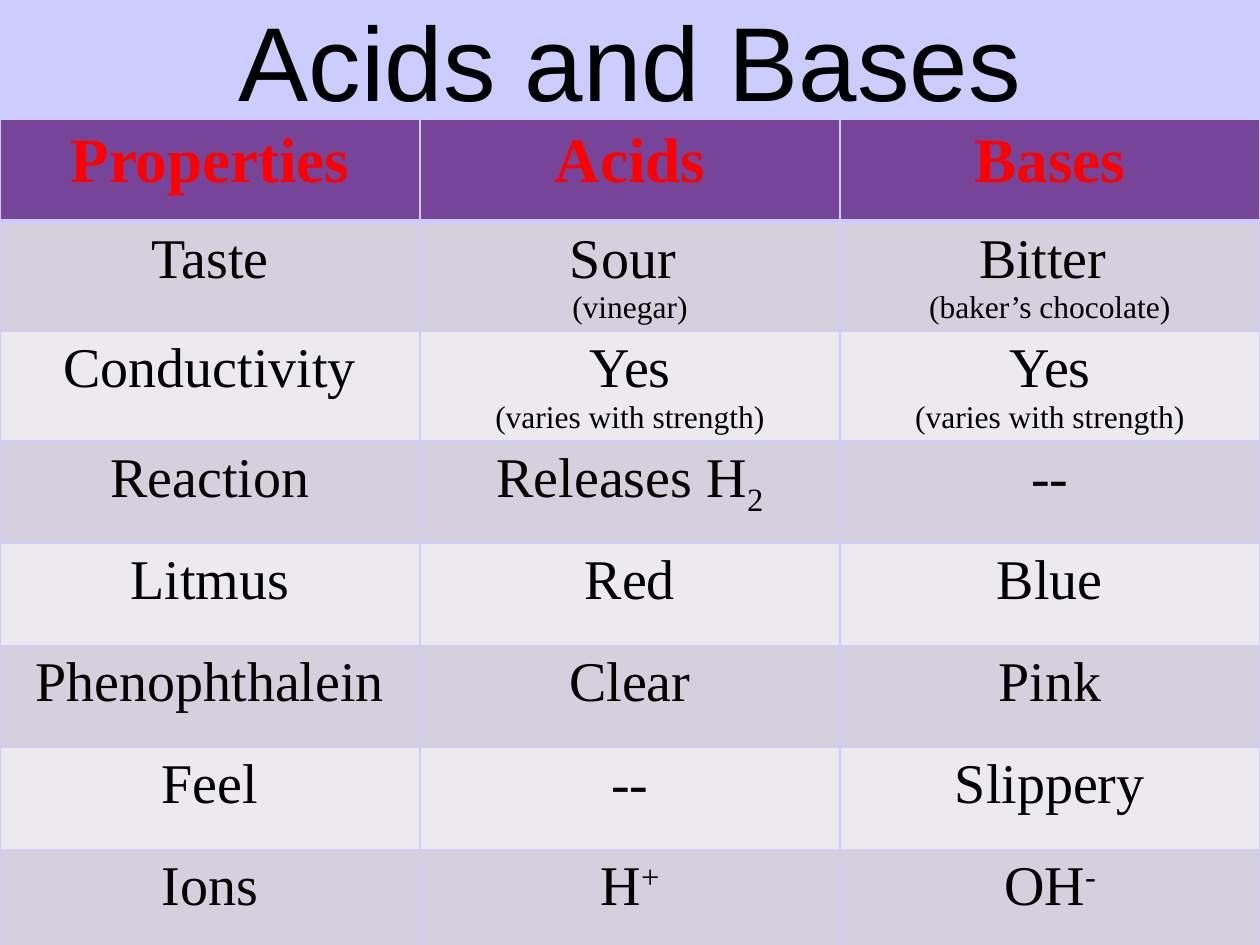
from lxml.etree import SubElement
from pptx import Presentation
from pptx.dml.color import RGBColor
from pptx.enum.text import MSO_ANCHOR, PP_ALIGN
from pptx.oxml.ns import qn
from pptx.util import Inches, Pt

TITLE = "Acids and Bases"
HEADINGS = ["Properties", "Acids", "Bases"]
# A cell is plain text, or (text, kind of addition, addition).
PROPERTIES = [
    ["Taste", ("Sour ", "note", "(vinegar)"), ("Bitter ", "note", "(baker’s chocolate)")],
    ["Conductivity", ("Yes", "note", "(varies with strength)"),
     ("Yes", "note", "(varies with strength)")],
    ["Reaction", ("Releases H", "subscript", "2"), "--"],
    ["Litmus", "Red", "Blue"],
    ["Phenophthalein", "Clear", "Pink"],
    ["Feel", "--", "Slippery"],
    ["Ions", ("H", "superscript", "+"), ("OH", "superscript", "-")],
]
BASELINES = {"subscript": "-25000", "superscript": "30000"}

BACKGROUND = "CCCCFF"
HEADING_FILL = "764599"
BAND_FILLS = ["D6CFDE", "ECE9EF"]
TITLE_FORMAT = {"name": "Arial", "size": Pt(60), "color": "000000"}
HEADING_FORMAT = {"name": "Times New Roman", "size": Pt(36), "bold": True, "color": "FF0000"}
BODY_FORMAT = {"name": "Times New Roman", "size": Pt(32), "bold": False, "color": "000000"}
NOTE_FORMAT = {**BODY_FORMAT, "size": Pt(18)}


def paint(fill, color):
    fill.solid()
    fill.fore_color.rgb = RGBColor.from_string(color)


def add_run(paragraph, text, font_format):
    paragraph.alignment = PP_ALIGN.CENTER
    run = paragraph.add_run()
    run.text = text
    for name, value in font_format.items():
        if name == "color":
            paint(run.font.fill, value)
        else:
            setattr(run.font, name, value)
    return run


def add_borders(cell, widths):
    """Draw the cell's sides; widths maps L, R, T and B to points."""
    properties = cell._tc.get_or_add_tcPr()
    for side, width in widths.items():
        line = SubElement(properties, qn(f"a:ln{side}"), w=str(Pt(width)))
        SubElement(SubElement(line, qn("a:solidFill")), qn("a:srgbClr"), val=BACKGROUND)


def write_cell(cell, content, font_format):
    text, kind, addition = content if isinstance(content, tuple) else (content, None, None)
    paragraph = cell.text_frame.paragraphs[0]
    add_run(paragraph, text, font_format)
    if kind == "note":
        add_run(cell.text_frame.add_paragraph(), addition, NOTE_FORMAT)
    elif kind:
        script = add_run(paragraph, addition, font_format)
        script._r.get_or_add_rPr().set("baseline", BASELINES[kind])


def add_title(slide):
    title = slide.shapes.title
    title.left, title.top, title.width, title.height = map(Inches, (0.5, 0, 9, 1.02))
    title.text_frame.vertical_anchor = MSO_ANCHOR.BOTTOM
    add_run(title.text_frame.paragraphs[0], TITLE, TITLE_FORMAT)


def add_property_table(slide):
    rows = [HEADINGS, *PROPERTIES]
    table = slide.shapes.add_table(
        len(rows), len(HEADINGS), 0, Inches(0.95), Inches(10), Inches(0.81 * len(rows))
    ).table
    for r, row in enumerate(rows):
        fill = BAND_FILLS[(r - 1) % 2] if r else HEADING_FILL
        font_format = BODY_FORMAT if r else HEADING_FORMAT
        widths = {"L": 1, "R": 1, "T": 3 if r == 1 else 1, "B": 1 if r else 3}
        for c, content in enumerate(row):
            cell = table.cell(r, c)
            add_borders(cell, widths)
            paint(cell.fill, fill)
            write_cell(cell, content, font_format)


def main():
    presentation = Presentation()
    presentation.slide_width, presentation.slide_height = Inches(10), Inches(7.5)
    slide = presentation.slides.add_slide(presentation.slide_layouts[5])
    paint(slide.background.fill, BACKGROUND)
    add_title(slide)
    add_property_table(slide)
    presentation.save("out.pptx")


if __name__ == "__main__":
    main()
